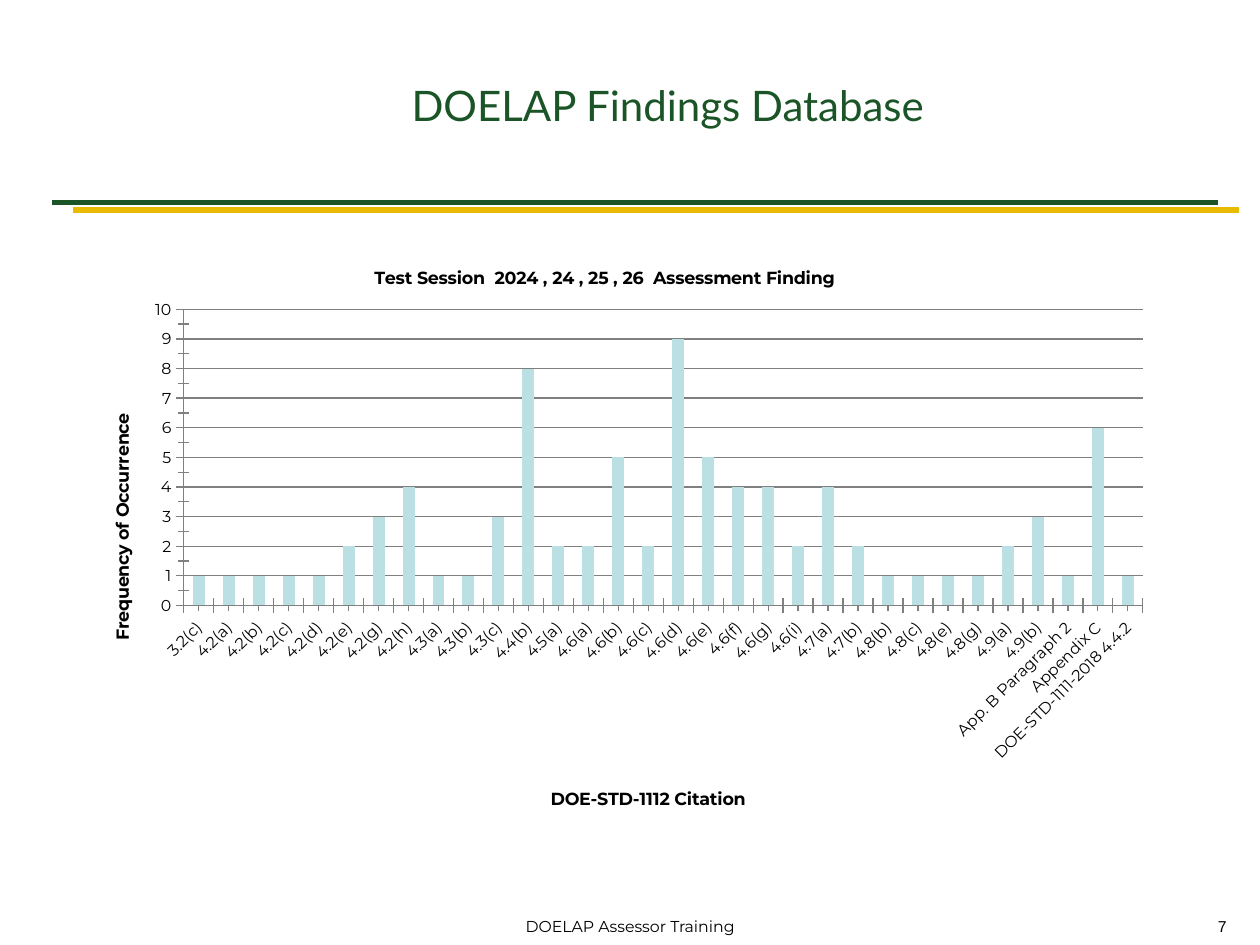
from lxml import etree
from pptx import Presentation, util as u
from pptx.chart.data import CategoryChartData
from pptx.dml.color import RGBColor
from pptx.enum import chart as ch, shapes, text
from pptx.oxml import parse_xml
from pptx.oxml.ns import nsdecls, qn

COLS, ROWS = 120, 90
GREEN, GOLD, BLACK, GREY, AQUA = "1B5527", "E8BB00", "000000", "808080", "BBE0E3"
BODY, HEAD = "Montserrat", "Lato"

FINDINGS = {
    "3.2(c)": 1, "4.2(a)": 1, "4.2(b)": 1, "4.2(c)": 1, "4.2(d)": 1,
    "4.2(e)": 2, "4.2(g)": 3, "4.2(h)": 4, "4.3(a)": 1, "4.3(b)": 1,
    "4.3(c)": 3, "4.4(b)": 8, "4.5(a)": 2, "4.6(a)": 2, "4.6(b)": 5,
    "4.6(c)": 2, "4.6(d)": 9, "4.6(e)": 5, "4.6(f)": 4, "4.6(g)": 4,
    "4.6(i)": 2, "4.7(a)": 4, "4.7(b)": 2, "4.8(b)": 1, "4.8(c)": 1,
    "4.8(e)": 1, "4.8(g)": 1, "4.9(a)": 2, "4.9(b)": 3,
    "App. B Paragraph 2": 1, "Appendix C": 6, "DOE-STD-1111-2018 4.4.2": 1,
}


def rgb(code):
    return RGBColor.from_string(code)


def style(font, size, face=BODY, color=BLACK, bold=False):
    font.size, font.name, font.bold = u.Pt(size), face, bold
    font.color.rgb = rgb(color)


def write(frame, words, align=text.PP_ALIGN.LEFT, **look):
    frame.text = words
    para = frame.paragraphs[0]
    para.alignment = align
    style(para.runs[0].font, **look)


def layout(x, y, w=None, h=None):
    """Return a manual chart layout, in shares of the chart's size."""
    target = '<c:layoutTarget val="inner"/>' if w else ""
    sizes = f'<c:w val="{w}"/><c:h val="{h}"/>' if w else ""
    return parse_xml(
        f'<c:layout {nsdecls("c")}><c:manualLayout>{target}'
        f'<c:xMode val="edge"/><c:yMode val="edge"/>'
        f'<c:x val="{x}"/><c:y val="{y}"/>{sizes}</c:manualLayout></c:layout>')


def place(node, *share):
    for old in node.findall(qn("c:layout")):
        node.remove(old)
    before = node.find(qn("c:tx"))
    if before is None:
        node.insert(0, layout(*share))
    else:
        before.addnext(layout(*share))


class Page:
    """A slide laid out on a grid of COLS by ROWS."""

    def __init__(self, deck):
        self.wide, self.high = deck.slide_width, deck.slide_height
        self.slide = deck.slides.add_slide(deck.slide_layouts[5])

    def grid(self, col, row):
        return round(self.wide * col / COLS), round(self.high * row / ROWS)

    def title(self, words, col, row, cols, rows, **look):
        box = self.slide.shapes.title
        box.left, box.top = self.grid(col, row)
        box.width, box.height = self.grid(cols, rows)
        box.text_frame.vertical_anchor = text.MSO_ANCHOR.MIDDLE
        write(box.text_frame, words, **look)

    def label(self, words, col, row, cols, rows, **look):
        box = self.slide.shapes.add_textbox(
            *self.grid(col, row), *self.grid(cols, rows))
        box.text_frame.word_wrap = True
        write(box.text_frame, words, **look)

    def rule(self, col, row, cols, color):
        line = self.slide.shapes.add_connector(
            shapes.MSO_CONNECTOR.STRAIGHT,
            *self.grid(col, row), *self.grid(col + cols, row))
        line.line.color.rgb, line.line.width = rgb(color), u.Pt(3)
        etree.SubElement(line._element.spPr, qn("a:effectLst"))

    def bars(self, data, name, col, row, cols, rows):
        source = CategoryChartData()
        source.categories = data.keys()
        source.add_series(name, data.values())
        chart = self.slide.shapes.add_chart(
            ch.XL_CHART_TYPE.COLUMN_CLUSTERED, *self.grid(col, row),
            *self.grid(cols, rows), source).chart
        chart.has_legend = False
        style(chart.font, 10)
        plot = chart.plots[0]
        plot.gap_width, plot.vary_by_categories = 150, False
        fill = plot.series[0].format.fill
        fill.solid()
        fill.fore_color.rgb = rgb(AQUA)
        for axis in (chart.category_axis, chart.value_axis):
            axis.major_tick_mark = axis.minor_tick_mark = ch.XL_TICK_MARK.CROSS
            axis.format.line.color.rgb = rgb(GREY)
            style(axis.tick_labels.font, 9)
        turn = chart.category_axis.tick_labels.font._element.getparent().getparent()
        turn.getparent().find(qn("a:bodyPr")).set("rot", "-2700000")
        scale = chart.value_axis
        scale.minimum_scale, scale.maximum_scale = 0, 10
        scale.major_unit, scale.minor_unit = 1, 0.5
        scale.major_gridlines.format.line.color.rgb = rgb(GREY)
        place(chart._chartSpace.chart.plotArea, 0.1, 0.12, 0.87, 0.5)
        return chart


def caption(owner, words, x, y):
    """Title a chart or an axis at a share of the chart's size."""
    owner.has_title = True
    title = owner.chart_title if hasattr(owner, "chart_title") else owner.axis_title
    write(title.text_frame, words, align=None, size=10, bold=True)
    place(title._element, x, y)


def main():
    deck = Presentation()
    deck.slide_width, deck.slide_height = u.Inches(10), u.Inches(7.5)
    page = Page(deck)
    page.rule(5, 19.3, 111, GREEN)
    page.rule(7, 20, 111, GOLD)
    page.title("DOELAP Findings Database", 38, 2, 76, 16,
               size=24, face=HEAD, color=GREEN)
    page.label("DOELAP Assessor Training", 41, 86.75, 38, 3.25,
               align=text.PP_ALIGN.CENTER, size=9)
    page.label("7", 94, 86.75, 24, 3,
               align=text.PP_ALIGN.RIGHT, size=9, face="Arial")
    chart = page.bars(FINDINGS, "Series 1", 7, 22.7, 105, 56.4)
    caption(chart, "Test Session  2024 , 24 , 25 , 26  Assessment Finding", 0.27, 0.04)
    caption(chart.category_axis, "DOE-STD-1112 Citation", 0.43, 0.92)
    caption(chart.value_axis, "Frequency of Occurrence", 0.03, 0.29)
    deck.save("out.pptx")


if __name__ == "__main__":
    main()
